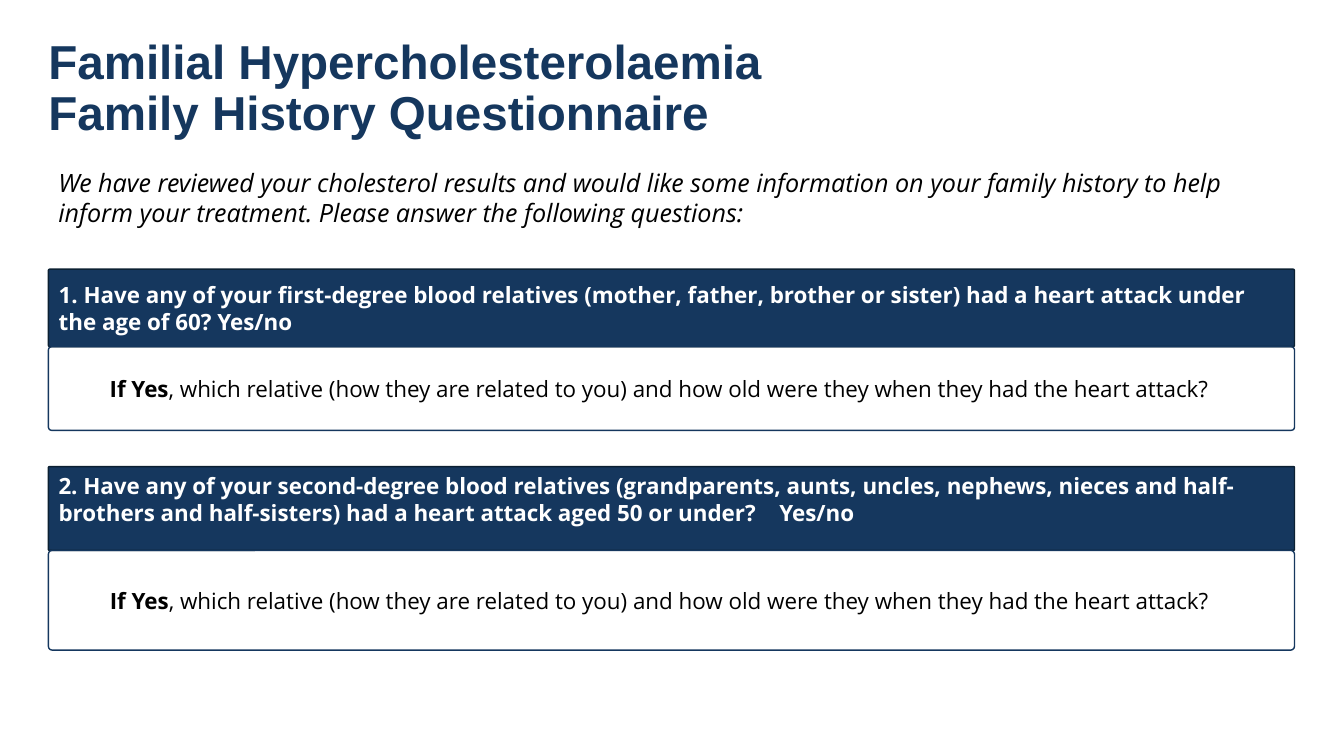
from pptx import Presentation
from pptx.dml.color import RGBColor
from pptx.enum.shapes import MSO_SHAPE as Shape
from pptx.enum.text import MSO_ANCHOR as Anchor, PP_ALIGN as Align
from pptx.oxml.ns import qn
from pptx.util import Pt
from lxml.etree import SubElement

EMU_PER_PX = 9144
NAVY, EDGE, WHITE, BLACK = "15375E", "0B2032", "FFFFFF", "000000"
LEFT, WIDTH = 48, 1236
BODY_FONT = "Open Sans"


def px(*lengths):
    return [length * EMU_PER_PX for length in lengths]


def paint(target, colour):
    target.rgb = RGBColor.from_string(colour)


def add_span(para, text, size, colour, font=BODY_FONT, bold=False, italic=False):
    span = para.add_run()
    span.text = text
    span.font.name = font
    span.font.size = Pt(size)
    span.font.bold = bold
    span.font.italic = italic
    paint(span.font.color, colour)


def add_title(page, lines):
    box = page.shapes.add_textbox(*px(LEFT, 38, WIDTH, 48))
    frame = box.text_frame
    frame.word_wrap = True
    frame.margin_left = frame.margin_right = 0
    frame.margin_top = frame.margin_bottom = 0
    para = frame.paragraphs[0]
    para.line_spacing = 0.9
    for index, line in enumerate(lines):
        if index:
            para.add_line_break()
        add_span(para, line, 34, NAVY, font="Arial", bold=True)


def add_intro(page, text):
    box = page.shapes.add_textbox(*px(LEFT, 161, 1221, 71))
    box.text_frame.word_wrap = True
    add_span(box.text_frame.paragraphs[0], text, 18, BLACK, italic=True)


def add_panel(page, top, height, rounding, fill, line, anchor):
    panel = page.shapes.add_shape(
        Shape.ROUNDED_RECTANGLE, *px(LEFT, top, WIDTH, height))
    panel.adjustments[0] = rounding
    panel.shadow.inherit = False
    if fill:
        panel.fill.solid()
        paint(panel.fill.fore_color, fill)
    else:
        panel.fill.background()
    paint(panel.line.color, line)
    panel.line.width = Pt(1)
    frame = panel.text_frame
    frame.word_wrap = True
    frame.vertical_anchor = anchor
    para = frame.paragraphs[0]
    para.alignment = Align.LEFT
    return para


def add_question(page, top, height, rounding, text, anchor, tab=None):
    para = add_panel(page, top, height, rounding, NAVY, EDGE, anchor)
    if tab:
        stops = SubElement(para._p.get_or_add_pPr(), qn("a:tabLst"))
        SubElement(stops, qn("a:tab"), pos=str(px(tab)[0]), algn="l")
    add_span(para, text, 16, WHITE, bold=True)


def add_follow_up(page, top, height):
    para = add_panel(page, top, height, 0.04, None, NAVY, Anchor.MIDDLE)
    para._p.get_or_add_pPr().set("marL", str(px(50)[0]))
    add_span(para, "If Yes", 16, BLACK, bold=True)
    add_span(para, ", which relative (how they are related to you) and how old "
             "were they when they had the heart attack?", 16, BLACK)


def main():
    deck = Presentation()
    deck.slide_width, deck.slide_height = px(1333, 750)
    page = deck.slides.add_slide(deck.slide_layouts[6])
    add_title(page, ["Familial Hypercholesterolaemia",
                     "Family History Questionnaire"])
    add_intro(page, "We have reviewed your cholesterol results and would like "
              "some information on your family history to help inform your "
              "treatment. Please answer the following questions:")
    add_question(page, 267, 77, 0.02,
                 "1. Have any of your first-degree blood relatives (mother, "
                 "father, brother or sister) had a heart attack under the age "
                 "of 60? Yes/no", Anchor.MIDDLE)
    add_follow_up(page, 344, 83)
    add_question(page, 463, 83, 0.01,
                 "2. Have any of your second-degree blood relatives "
                 "(grandparents, aunts, uncles, nephews, nieces and "
                 "half-brothers and half-sisters) had a heart attack aged 50 "
                 "or under?\tYes/no", Anchor.TOP, tab=715)
    add_follow_up(page, 546, 99)
    deck.save("out.pptx")


if __name__ == "__main__":
    main()
